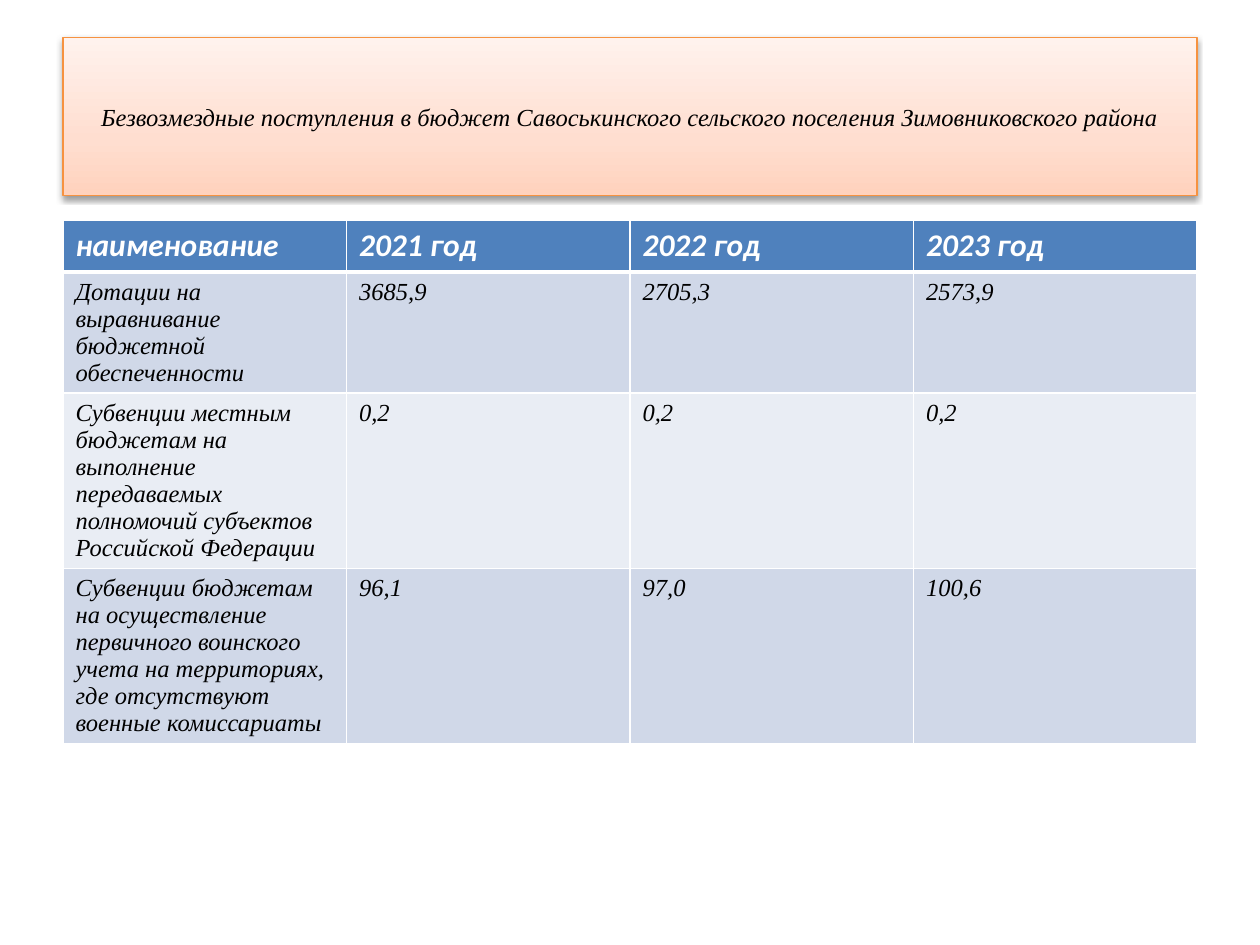
from dataclasses import dataclass

from lxml.etree import SubElement
from pptx import Presentation
from pptx.dml.color import RGBColor
from pptx.enum.shapes import MSO_SHAPE as Shape
from pptx.enum.text import MSO_ANCHOR as Anchor, PP_ALIGN as Align
from pptx.oxml.ns import qn
from pptx.util import Inches, Pt


@dataclass(frozen=True)
class Theme:
    heading_font: str = "Calibri"
    body_font: str = "Times New Roman"
    heading_size: int = 18
    body_size: int = 14
    black: str = "000000"
    white: str = "FFFFFF"
    header_fill: str = "4F81BD"
    band_fills: tuple = ("D0D8E8", "E9EDF4")
    title_line: str = "F69240"
    title_gradient: tuple = ((0, "FFD2BD"), (35, "FFDED0"), (100, "FFF2ED"))


THEME = Theme()

TITLE = ("Безвозмездные поступления в бюджет Савоськинского "
         "сельского поселения Зимовниковского района")
ROWS = [
    ("наименование", "2021 год", "2022 год", "2023 год"),
    ("Дотации на выравнивание бюджетной обеспеченности",
     "3685,9", "2705,3", "2573,9"),
    ("Субвенции местным бюджетам на выполнение передаваемых полномочий "
     "субъектов Российской Федерации", "0,2", "0,2", "0,2"),
    ("Субвенции бюджетам на осуществление первичного воинского учета на "
     "территориях, где отсутствуют военные комиссариаты",
     "96,1", "97,0", "100,6"),
]


def add_child(parent, tag, **attributes):
    child = SubElement(parent, qn(tag))
    for name, value in attributes.items():
        child.set(name, str(value))
    return child


def set_text(text_frame, text, font_name, size, color, bold=False):
    text_frame.text = text
    font = text_frame.paragraphs[0].runs[0].font
    font.name = font_name
    font.size = Pt(size)
    font.bold = bold
    font.italic = True
    font.color.rgb = RGBColor.from_string(color)


def set_gradient(shape, stops):
    """Fill the shape from bottom to top."""
    shape.fill.gradient()
    shape.fill.gradient_angle = 90
    stop_list = shape._element.spPr.find(qn("a:gradFill")).find(qn("a:gsLst"))
    for old_stop in list(stop_list):
        stop_list.remove(old_stop)
    for percent, color in stops:
        stop = add_child(stop_list, "a:gs", pos=percent * 1000)
        add_child(stop, "a:srgbClr", val=color)


def set_shadow(shape):
    shape.shadow.inherit = False
    effects = shape._element.spPr.find(qn("a:effectLst"))
    shadow = add_child(effects, "a:outerShdw", blurRad=Pt(3.1), dist=Pt(1.6),
                       dir=90 * 60000, rotWithShape=0)
    color = add_child(shadow, "a:srgbClr", val=THEME.black)
    add_child(color, "a:alpha", val=38000)


def set_borders(cell, bottom_width):
    properties = cell._tc.get_or_add_tcPr()
    # Borders must come before the cell fill
    for side, width in (("L", 1), ("R", 1), ("T", 1), ("B", bottom_width)):
        line = add_child(properties, f"a:ln{side}", w=Pt(width))
        fill = add_child(line, "a:solidFill")
        add_child(fill, "a:srgbClr", val=THEME.white)


def add_title(slide):
    title = slide.shapes.add_shape(Shape.RECTANGLE, Inches(0.5), Inches(0.3),
                                   Inches(9), Inches(1.25))
    set_gradient(title, THEME.title_gradient)
    title.line.color.rgb = RGBColor.from_string(THEME.title_line)
    title.line.width = Pt(0.75)
    set_shadow(title)
    text_frame = title.text_frame
    text_frame.word_wrap = True
    text_frame.vertical_anchor = Anchor.MIDDLE
    set_text(text_frame, TITLE, THEME.body_font, THEME.body_size, THEME.black)
    text_frame.paragraphs[0].alignment = Align.CENTER


def add_income_table(slide):
    frame = slide.shapes.add_table(len(ROWS), len(ROWS[0]), Inches(0.5),
                                   Inches(1.75), Inches(9), Inches(4.44))
    table = frame.table
    # Rows grow from this minimum to fit their text
    for row in table.rows:
        row.height = Inches(0.41)
    frame.height = Inches(4.44)

    for row_index, values in enumerate(ROWS):
        is_header = row_index == 0
        if is_header:
            fill = THEME.header_fill
            style = (THEME.heading_font, THEME.heading_size, THEME.white, True)
        else:
            fill = THEME.band_fills[(row_index - 1) % 2]
            style = (THEME.body_font, THEME.body_size, THEME.black)
        for column_index, value in enumerate(values):
            cell = table.cell(row_index, column_index)
            set_text(cell.text_frame, value, *style)
            set_borders(cell, bottom_width=3 if is_header else 1)
            cell.fill.solid()
            cell.fill.fore_color.rgb = RGBColor.from_string(fill)


def main():
    presentation = Presentation()
    presentation.slide_width = Inches(10)
    presentation.slide_height = Inches(7.5)
    slide = presentation.slides.add_slide(presentation.slide_layouts[6])
    add_title(slide)
    add_income_table(slide)
    presentation.save("out.pptx")


if __name__ == "__main__":
    main()
